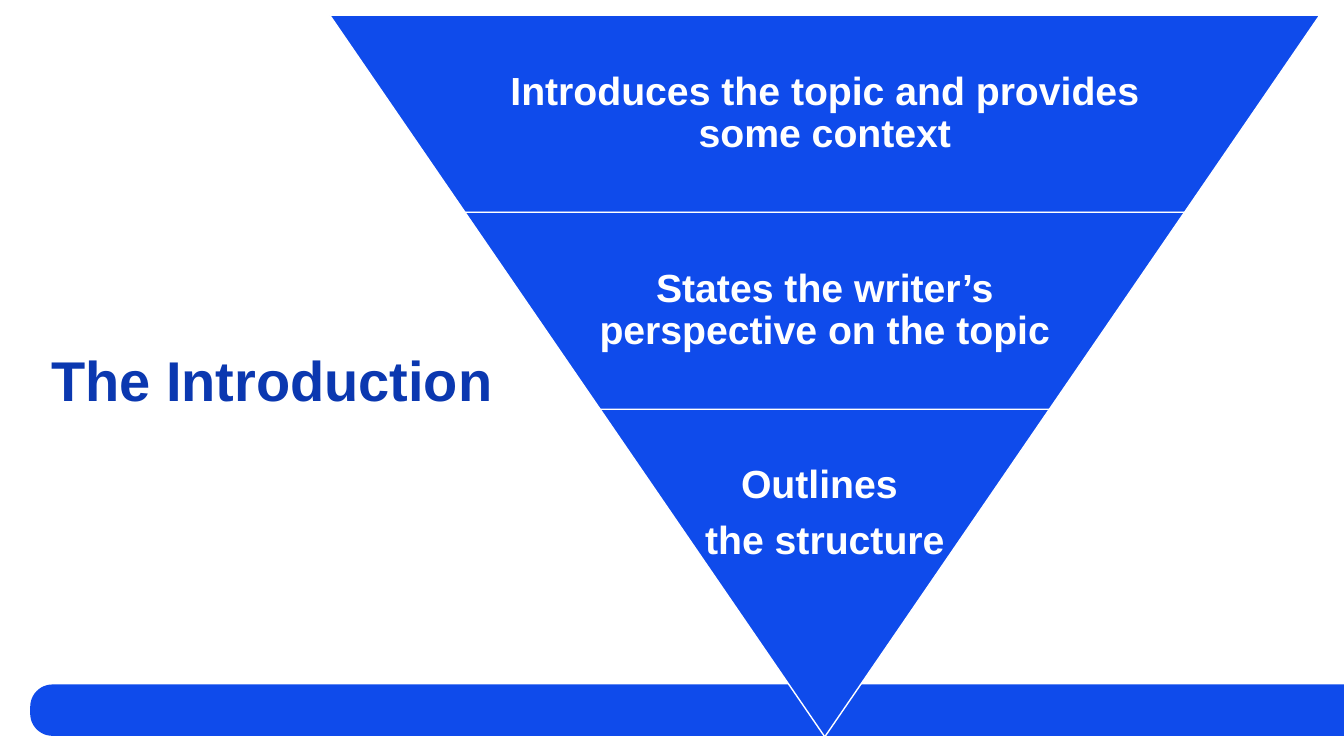
import pptx
import pptx.dml.color
import pptx.enum.shapes
import pptx.enum.text
import pptx.util

Inches = pptx.util.Inches
Pt = pptx.util.Pt
MSO_SHAPE = pptx.enum.shapes.MSO_SHAPE
ANCHOR = pptx.enum.text.MSO_ANCHOR

BLUE = pptx.dml.color.RGBColor(0x0F, 0x4B, 0xEB)
NAVY = pptx.dml.color.RGBColor(0x0B, 0x38, 0xB0)
WHITE = pptx.dml.color.RGBColor(0xFF, 0xFF, 0xFF)

FUNNEL_CENTER = 8.18
FUNNEL_TOP = 0.15
FUNNEL_WIDTH = 9.82
BAND_HEIGHT = 1.96
BAND_STEP = 1.955
TIP_HEIGHT = 3.25
SLOPE = 0.686  # horizontal run of each side per unit of height


class SlideBuilder:
    FONT = {"name": "Arial", "bold": True}

    def __init__(self, slide):
        self.slide = slide

    def shape(self, kind, box, rotation, adjustments, line=None):
        sp = self.slide.shapes.add_shape(kind, *map(Inches, box))
        sp.rotation = rotation
        sp.shadow.inherit = False
        for i, value in enumerate(adjustments):
            sp.adjustments[i] = value
        sp.fill.solid()
        sp.fill.fore_color.rgb = BLUE
        if line is None:
            sp.line.fill.background()
        else:
            sp.line.color.rgb = line
            sp.line.width = Pt(1)

    def text(self, box, lines, size, color, anchor=ANCHOR.TOP, inset=0.04, gap=0):
        tf = self.slide.shapes.add_textbox(*map(Inches, box)).text_frame
        frame_format = {"word_wrap": True, "vertical_anchor": anchor}
        for side in ("left", "top", "right", "bottom"):
            frame_format["margin_" + side] = Inches(inset)
        for name, value in frame_format.items():
            setattr(tf, name, value)
        for i, line in enumerate(lines):
            p = tf.paragraphs[0] if i == 0 else tf.add_paragraph()
            p.alignment = pptx.enum.text.PP_ALIGN.CENTER
            p.line_spacing = 0.9
            p.space_after = Pt(gap)
            r = p.add_run()
            r.text = line
            for name, value in {**self.FONT, "size": Pt(size)}.items():
                setattr(r.font, name, value)
            r.font.color.rgb = color

    def funnel_band(self, index, height):
        """Draw one downward-narrowing band and return its top and width."""
        top = FUNNEL_TOP + index * BAND_STEP
        width = FUNNEL_WIDTH - 2 * SLOPE * index * BAND_STEP
        self.shape(MSO_SHAPE.TRAPEZOID,
                   (FUNNEL_CENTER - width / 2, top, width, height),
                   180, [SLOPE], WHITE)
        return top, width


def main():
    prs = pptx.Presentation()
    prs.slide_width, prs.slide_height = Inches(13.33), Inches(7.5)
    builder = SlideBuilder(prs.slides.add_slide(prs.slide_layouts[6]))

    builder.shape(MSO_SHAPE.ROUND_2_SAME_RECTANGLE,
                  (6.56, 0.53, 0.51, 13.03), 270, [0.433, 0])
    builder.text((0, 3.45, 5.39, 1.09), ["The Introduction"], 40, NAVY, inset=0.05)

    bands = ["Introduces the topic and provides some context",
             "States the writer’s perspective on the topic"]
    for i, label in enumerate(bands):
        top, width = builder.funnel_band(i, BAND_HEIGHT)
        text_width = 0.65 * width
        builder.text((FUNNEL_CENTER - text_width / 2, top, text_width, BAND_HEIGHT),
                     [label], 28, WHITE, ANCHOR.MIDDLE)

    top, width = builder.funnel_band(len(bands), TIP_HEIGHT)
    builder.text((FUNNEL_CENTER - width / 2, top + 0.51, width, 1.2),
                 ["Outlines ", "the structure"], 28, WHITE, gap=10)

    prs.save("out.pptx")


if __name__ == "__main__":
    main()
